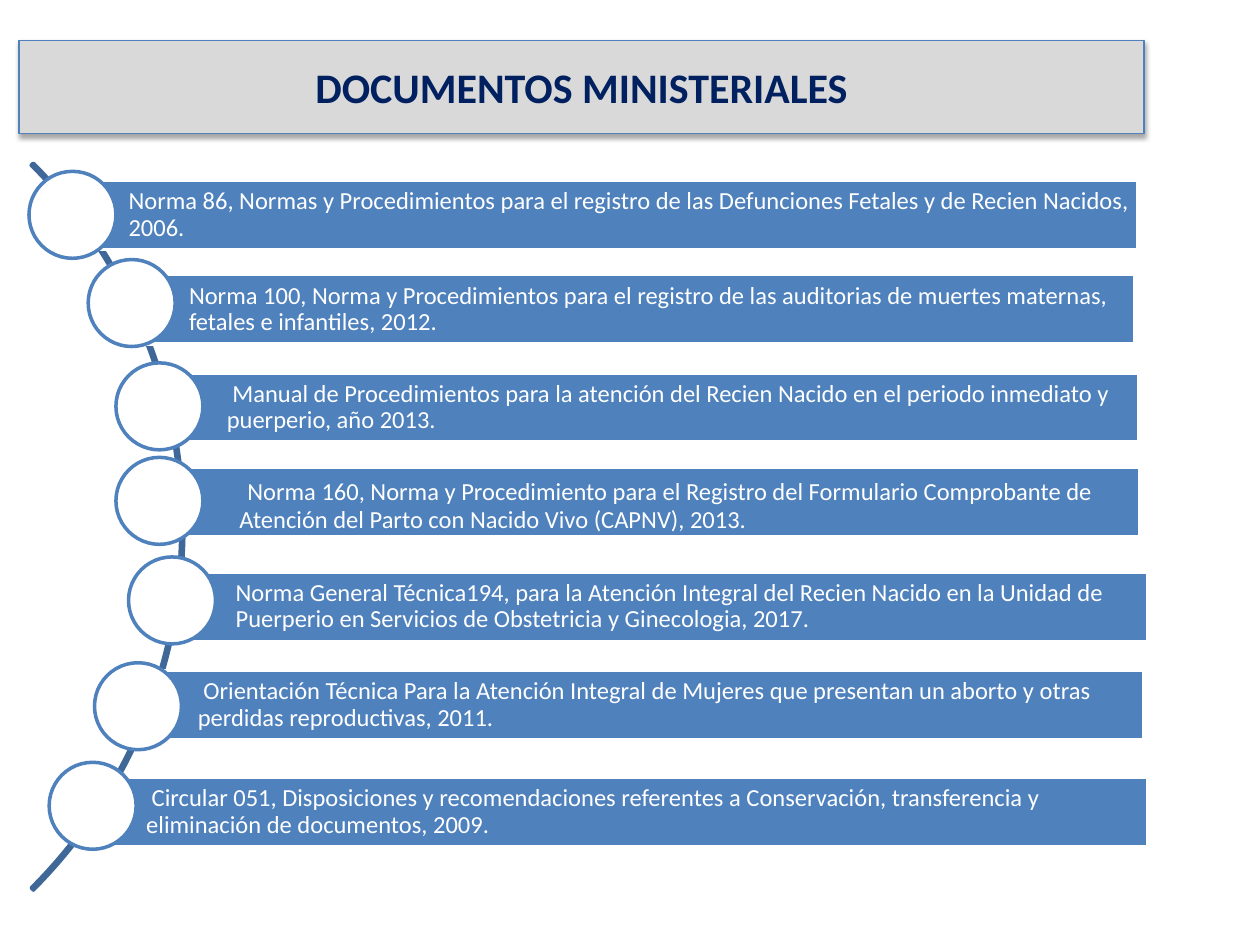
from lxml.etree import SubElement as Sub
from pptx import Presentation
from pptx.dml.color import RGBColor
from pptx.enum.shapes import MSO_SHAPE as Kind
from pptx.enum.text import MSO_ANCHOR as Anchor, PP_ALIGN as Align
from pptx.oxml.ns import qn
from pptx.util import Inches, Pt

COLORS = {"navy": "002060", "bar": "4F81BD", "arc": "3F6797", "gray": "D9D9D9",
          "white": "FFFFFF", "black": "000000"}

TITLE = "DOCUMENTOS MINISTERIALES"

# Bar left, top, right; circle left, top; size of a leading space, text
ITEMS = [
    (0.58, 1.43, 9.03, 0.23, 1.36, 0, "Norma 86, Normas y Procedimientos para el registro de las "
     "Defunciones Fetales y de Recien Nacidos, 2006."),
    (1.06, 2.18, 9.01, 0.70, 2.06, 0, "Norma 100, Norma y Procedimientos para el registro de las "
     "auditorias de muertes maternas, fetales e infantiles, 2012."),
    (1.36, 2.96, 9.04, 0.92, 2.88, 14, "Manual de Procedimientos para la atención del Recien Nacido "
     "en el periodo inmediato y puerperio, año 2013."),
    (1.46, 3.71, 9.05, 0.92, 3.63, 20, "Norma 160, Norma y Procedimiento para el Registro del "
     "Formulario Comprobante de Atención del Parto con Nacido Vivo (CAPNV), 2013."),
    (1.43, 4.54, 9.11, 1.02, 4.42, 0, "Norma General Técnica194, para la Atención Integral del Recien "
     "Nacido en la Unidad de Puerperio en Servicios de Obstetricia y Ginecologia, 2017."),
    (1.13, 5.32, 9.08, 0.75, 5.26, 14, "Orientación Técnica Para la Atención Integral de Mujeres que "
     "presentan un aborto y otras perdidas reproductivas, 2011."),
    (0.72, 6.17, 9.11, 0.39, 6.05, 14, "Circular 051, Disposiciones y recomendaciones referentes a "
     "Conservación, transferencia y eliminación de documentos, 2009."),
]
BAR_H, DOT = 0.55, 0.69


def rgb(name):
    return RGBColor.from_string(COLORS[name])


def paint(shape, line, fill=None, width=2):
    if fill:
        shape.fill.solid()
        shape.fill.fore_color.rgb = rgb(fill)
    else:
        shape.fill.background()
    shape.line.color.rgb = rgb(line)
    shape.line.width = Pt(width)
    shape.shadow.inherit = False


def draw(kind, left, top, width, height, **style):
    shape = slide.shapes.add_shape(kind, *map(Inches, (left, top, width, height)))
    paint(shape, **style)
    return shape


def shade(shape, color, alpha, blur, dist, angle):
    effects = shape._element.spPr.find(qn("a:effectLst"))
    outer = Sub(effects, qn("a:outerShdw"), blurRad=str(Pt(blur)), dist=str(Pt(dist)),
                dir=str(angle * 60000), rotWithShape="0")
    tone = Sub(outer, qn("a:srgbClr"), val=COLORS[color])
    Sub(tone, qn("a:alpha"), val=str(alpha * 1000))


def write(shape, text, size=14, color="white", bold=False, align=Align.LEFT,
          lead=0, inset=(0.05, 0.05), spacing=None):
    frame = shape.text_frame
    frame.word_wrap = True
    frame.vertical_anchor = Anchor.MIDDLE
    frame.margin_left = Inches(inset[0])
    frame.margin_top = frame.margin_right = frame.margin_bottom = Inches(inset[1])
    para = frame.paragraphs[0]
    para.alignment = align
    if spacing:
        para.line_spacing = spacing
    runs = [(" ", lead, True)] if lead else []
    for words, points, strong in runs + [(text, size, bold)]:
        run = para.add_run()
        run.text = words
        run.font.name = "Calibri"
        run.font.size = Pt(points)
        run.font.bold = strong
        run.font.color.rgb = rgb(color)


deck = Presentation()
deck.slide_width, deck.slide_height = Inches(10), Inches(7.5)
slide = deck.slides.add_slide(deck.slide_layouts[5])

# Arc behind the list: start angle, end angle, thickness
arc = draw(Kind.BLOCK_ARC, -6.7, 0.1, 8.16, 8.16, line="arc")
for i, value in enumerate((189, 27, 0.003)):
    arc.adjustments[i] = value

# Bars with their circles
for left, top, right, dot_x, dot_y, lead, text in ITEMS:
    bar = draw(Kind.RECTANGLE, left, top, right - left, BAR_H, fill="bar", line="white")
    write(bar, text, lead=lead, spacing=0.9, inset=(0.44, 0.06 if lead > 14 else 0.04))
    draw(Kind.OVAL, dot_x, dot_y, DOT, DOT, fill="white", line="bar")

# Title
title = slide.shapes.title
title.left, title.top, title.width, title.height = map(Inches, (0.15, 0.32, 8.93, 0.74))
paint(title, fill="gray", line="bar", width=0.75)
shade(title, "black", 35, 3.1, 1.8, 90)
write(title, TITLE, size=24, color="navy", bold=True, align=Align.CENTER)

deck.save("out.pptx")
